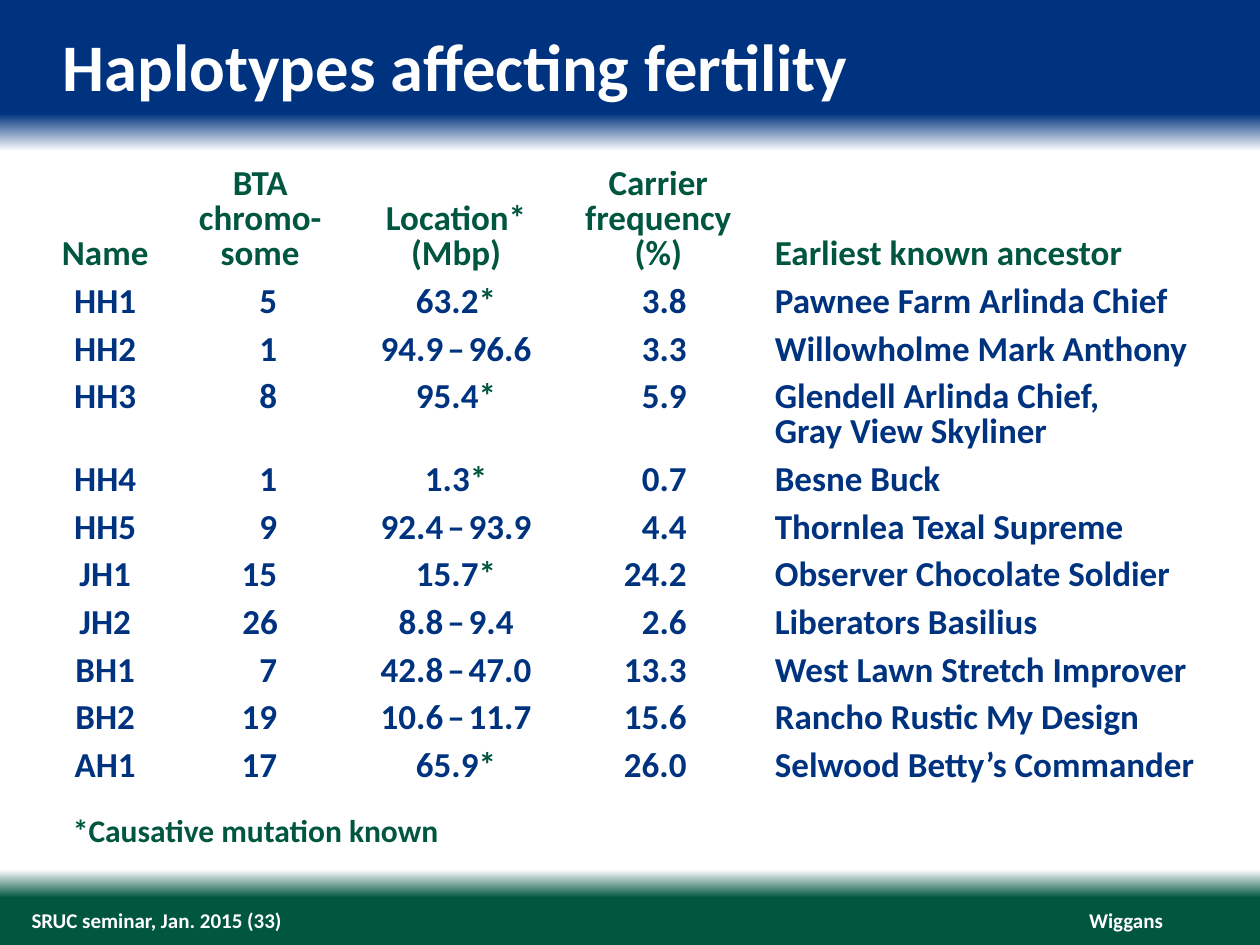
from pptx import Presentation
from pptx.dml.color import RGBColor
from pptx.enum.text import MSO_ANCHOR as Anchor, MSO_AUTO_SIZE as AutoSize, PP_ALIGN as Align
from pptx.oxml import parse_xml
from pptx.oxml.ns import nsdecls, qn
from pptx.util import Inches, Pt

COLORS = {"blue": "00337F", "green": "00563F", "white": "FFFFFF"}
BACKGROUND_STOPS = [(0, "blue"), (12, "blue"), (16, "white"), (92, "white"), (95, "green"), (100, "green")]
COLUMN_WIDTHS = [0.91, 1.55, 1.56, 1.65, 3.61]
LINE_HEIGHT = 20 / 72
HEADERS = ["Name", "BTA\nchromo-\nsome", "Location*\n(Mbp)", "Carrier\nfrequency\n(%)", "Earliest known ancestor"]
HAPLOTYPES = [
    ["HH1", "\t5", "63.2*", "3.8", "Pawnee Farm Arlinda Chief"],
    ["HH2", "\t1", "94.9–96.6", "3.3", "Willowholme Mark Anthony"],
    ["HH3", "\t8", "95.4*", "5.9", "Glendell Arlinda Chief,\nGray View Skyliner"],
    ["HH4", "\t1", "1.3*", "0.7", "Besne Buck"],
    ["HH5", "\t9", "92.4–93.9", "4.4", "Thornlea Texal Supreme"],
    ["JH1", "\t15", "15.7*", "24.2", "Observer Chocolate Soldier"],
    ["JH2", "26", "8.8–9.4", "2.6", "Liberators Basilius"],
    ["BH1", "\t7", "42.8–47.0", "13.3", "West Lawn Stretch Improver"],
    ["BH2", "\t19", "10.6–11.7", "15.6", "Rancho Rustic My Design"],
    ["AH1", "\t17", "65.9*", "26.0", "Selwood Betty’s Commander"],
]


def add_text(paragraph, text, size=20, color="blue", font="Calibri", bold=True):
    run = paragraph.add_run()
    run.text = text
    run.font.name = font
    run.font.size = Pt(size)
    run.font.bold = bold
    run.font.color.rgb = RGBColor.from_string(COLORS[color])


def add_location(paragraph, location):
    if location.endswith("*"):
        add_text(paragraph, location[:-1])
        add_text(paragraph, "*", color="green")
        return
    start, end = location.split("–")
    for text, size in [(start, 20), (" ", 10), ("–", 20), (" ", 10), (end, 20)]:
        add_text(paragraph, text, size=size)


def add_right_tab(paragraph, position):
    properties = paragraph._p.get_or_add_pPr()
    properties.append(parse_xml(
        f'<a:tabLst {nsdecls("a")}><a:tab pos="{Inches(position)}" algn="r"/></a:tabLst>'))


class SlideBuilder:
    def __init__(self, presentation):
        self.slide = presentation.slides.add_slide(presentation.slide_layouts[6])

    def background(self, stops):
        self.slide.background.fill.gradient()
        gradient = self.slide.element.find(".//" + qn("a:gradFill"))
        stop_xml = "".join(
            f'<a:gs pos="{percent * 1000}"><a:srgbClr val="{COLORS[color]}"/></a:gs>'
            for percent, color in stops)
        gradient.getparent().replace(gradient, parse_xml(
            f'<a:gradFill {nsdecls("a")} rotWithShape="1"><a:gsLst>{stop_xml}</a:gsLst>'
            '<a:lin ang="5400000" scaled="0"/></a:gradFill>'))

    def text_box(self, text, left, top, width, height, size, color="white",
                 align=Align.LEFT, anchor=Anchor.MIDDLE, wrap=True, margins=(0, 0)):
        box = self.slide.shapes.add_textbox(Inches(left), Inches(top), Inches(width), Inches(height))
        frame = box.text_frame
        frame.word_wrap = wrap
        frame.auto_size = AutoSize.SHAPE_TO_FIT_TEXT
        frame.vertical_anchor = anchor
        frame.margin_left = frame.margin_right = Inches(margins[0])
        frame.margin_top = frame.margin_bottom = Inches(margins[1])
        paragraph = frame.paragraphs[0]
        paragraph.alignment = align
        add_text(paragraph, text, size=size, color=color)

    def cell(self, cell, text, column, header):
        cell.fill.background()
        cell.vertical_anchor = Anchor.BOTTOM if header else Anchor.TOP
        cell.margin_left = cell.margin_right = Inches(0.1)
        cell.margin_top = Inches(0 if header else 0.05)
        cell.margin_bottom = Inches(0.05)
        if column == 3 and not header:
            cell.margin_right = Inches(0.6)
        for index, line in enumerate(text.split("\n")):
            frame = cell.text_frame
            paragraph = frame.add_paragraph() if index else frame.paragraphs[0]
            if line.startswith("\t"):
                add_right_tab(paragraph, 0.81)
            if column == 4 or line.startswith("\t"):
                paragraph.alignment = Align.LEFT
            elif column == 3 and not header:
                paragraph.alignment = Align.RIGHT
            else:
                paragraph.alignment = Align.CENTER
            paragraph.line_spacing = Pt(20)
            if column == 2 and not header:
                add_location(paragraph, line)
            else:
                add_text(paragraph, line, color="green" if header else "blue")

    def table(self, rows, left, top, widths):
        heights = [LINE_HEIGHT * max(text.count("\n") + 1 for text in row) + (0.1 if index else 0.05)
                   for index, row in enumerate(rows)]
        table = self.slide.shapes.add_table(
            len(rows), len(widths), Inches(left), Inches(top),
            Inches(sum(widths)), Inches(sum(heights))).table
        table.first_row = table.horz_banding = False
        for column, width in enumerate(widths):
            table.columns[column].width = Inches(width)
        for index, row in enumerate(rows):
            table.rows[index].height = Inches(heights[index])
            for column, text in enumerate(row):
                self.cell(table.cell(index, column), text, column, header=index == 0)


def main():
    presentation = Presentation()
    presentation.slide_width = Inches(10)
    presentation.slide_height = Inches(7.5)
    builder = SlideBuilder(presentation)
    builder.background(BACKGROUND_STOPS)
    builder.text_box("Wiggans", 8.64, 7.2, 0.59, 0.2, size=12, align=Align.RIGHT, wrap=False)
    builder.text_box("SRUC seminar, Jan. 2015 (33)", 0.25, 7.2, 7.42, 0.2, size=12)
    builder.text_box("Haplotypes affecting fertility", 0.5, 0.2, 9, 0.64, size=38, anchor=Anchor.TOP)
    builder.text_box("*Causative mutation known", 0.48, 6.39, 3.13, 0.4, size=18,
                     color="green", wrap=False, margins=(0.1, 0.05))
    builder.table([HEADERS] + HAPLOTYPES, 0.38, 1.35, COLUMN_WIDTHS)
    presentation.save("out.pptx")


if __name__ == "__main__":
    main()
